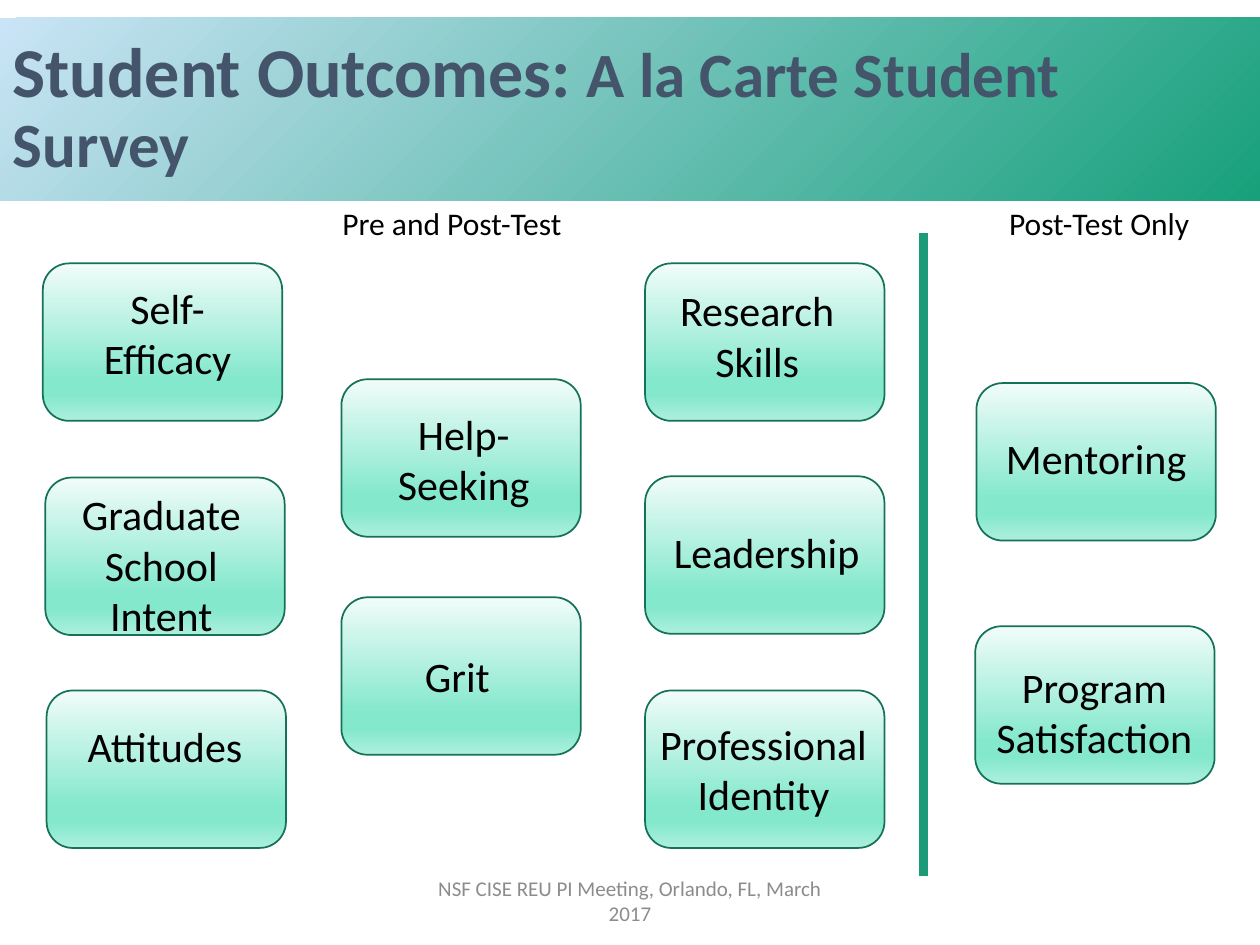
from dataclasses import dataclass

import pptx
import pptx.util
import pptx.dml.color
import pptx.enum.shapes
import pptx.enum.text
import pptx.oxml
import pptx.oxml.ns

RGBColor = pptx.dml.color.RGBColor
PP_ALIGN = pptx.enum.text.PP_ALIGN
MSO_ANCHOR = pptx.enum.text.MSO_ANCHOR

SLATE = RGBColor(0x44, 0x54, 0x6A)
BLACK = RGBColor(0, 0, 0)
GREY = RGBColor(0x8C, 0x8C, 0x8C)
GREEN = RGBColor(0x1D, 0x9A, 0x78)
DARK_GREEN = RGBColor(0x15, 0x72, 0x59)
SKY = RGBColor(0xCA, 0xE4, 0xF6)
EMERALD = RGBColor(0x17, 0xA0, 0x7B)
PALE_MINT = RGBColor(0xF1, 0xFC, 0xF9)
MINT = RGBColor(0x83, 0xE8, 0xCC)
LIGHT_MINT = RGBColor(0xAC, 0xEF, 0xDD)

BANNER_STOPS = [(0, SKY), (100, EMERALD)]
CARD_STOPS = [(0, PALE_MINT), (74, MINT), (83, MINT), (100, LIGHT_MINT)]

FONT = "Calibri"
CELL = pptx.util.Inches(0.1)  # the slide is a grid of 100 columns by 75 rows
COLUMNS, ROWS = 100, 75
CARD_W, CARD_H = 19, 12.5


@dataclass
class Area:
    """A rectangle in grid columns and rows."""
    col: float
    row: float
    cols: float
    rows: float

    def emu(self) -> list[int]:
        return [round(v * CELL) for v in (self.col, self.row, self.cols, self.rows)]


@dataclass
class Card:
    """A rounded box; its label is shifted from the box's top left corner."""
    text: str
    col: float
    row: float
    label_dx: float
    label_dy: float
    label_cols: float = 16.2
    lines: int = 2


CARDS = [
    Card("Self-Efficacy", 3.4, 20.9, 1.8, 1),
    Card("Graduate School Intent", 3.6, 37.9, 1.1, 0.4, lines=3),
    Card("Attitudes", 3.7, 54.8, 1.3, 1.9, lines=1),
    Card("Help-Seeking", 27.1, 30.1, 1.6, 1.8),
    Card("Grit", 27.1, 47.4, 1.1, 3.7, lines=1),
    Card("Research Skills", 51.2, 20.9, 0.8, 1.2),
    Card("Leadership", 51.2, 37.8, 1.1, 3.5, 17.1, lines=1),
    Card("Professional Identity", 51.2, 54.8, -0.1, 1.7, 19),
    Card("Mentoring", 77.5, 30.4, 0.6, 3.4, 17.8, lines=1),
    Card("Program Satisfaction", 77.4, 49.7, 0, 2.3, 18.9),
]


def fill_gradient(shape, stops: list[tuple[int, RGBColor]], clockwise: float) -> None:
    shape.fill.gradient()
    shape.fill.gradient_angle = 360 - clockwise
    gs_list = shape.element.spPr.find(".//" + pptx.oxml.ns.qn("a:gsLst"))
    for gs in list(gs_list):
        gs_list.remove(gs)
    for percent, color in stops:
        gs_list.append(pptx.oxml.parse_xml(
            f'<a:gs {pptx.oxml.ns.nsdecls("a")} pos="{percent * 1000}">'
            f'<a:srgbClr val="{color}"/></a:gs>'))


def format_run(r, size: float, color: RGBColor, bold: bool = False) -> None:
    r.font.name = FONT
    r.font.size = pptx.util.Pt(size)
    r.font.bold = bold
    r.font.color.rgb = color


def add_text(s, text: str, area: Area, size: float, color: RGBColor = BLACK,
             align=PP_ALIGN.CENTER, anchor=MSO_ANCHOR.TOP) -> None:
    tf = s.shapes.add_textbox(*area.emu()).text_frame
    tf.word_wrap = True
    tf.vertical_anchor = anchor
    tf.text = text
    p = tf.paragraphs[0]
    p.alignment = align
    format_run(p.runs[0], size, color)


def add_title(s) -> None:
    title = s.shapes.title
    title.left, title.top, title.width, title.height = Area(0, 1.4, COLUMNS, 14.5).emu()
    fill_gradient(title, BANNER_STOPS, 45)
    tf = title.text_frame
    tf.auto_size = pptx.enum.text.MSO_AUTO_SIZE.NONE
    tf.vertical_anchor = MSO_ANCHOR.MIDDLE
    p = tf.paragraphs[0]
    p.alignment = PP_ALIGN.LEFT
    p.line_spacing = 0.9
    for text, size in [("Student Outcomes: ", 40), ("A la Carte Student Survey", 36)]:
        r = p.add_run()
        r.text = text
        format_run(r, size, SLATE, bold=True)


def add_card(s, card: Card) -> None:
    box = s.shapes.add_shape(pptx.enum.shapes.MSO_SHAPE.ROUNDED_RECTANGLE,
                             *Area(card.col, card.row, CARD_W, CARD_H).emu())
    box.shadow.inherit = False
    fill_gradient(box, CARD_STOPS, 90)
    box.line.color.rgb = DARK_GREEN
    box.line.width = pptx.util.Pt(1)
    label = Area(card.col + card.label_dx, card.row + card.label_dy,
                 card.label_cols, 1 + 4 * card.lines)
    add_text(s, card.text, label, 24)


def add_divider(s, col: float, top: float, bottom: float) -> None:
    x, y1, y2 = (round(v * CELL) for v in (col, top, bottom))
    line = s.shapes.add_connector(pptx.enum.shapes.MSO_CONNECTOR.STRAIGHT, x, y1, x, y2)
    line.line.color.rgb = GREEN
    line.line.width = pptx.util.Pt(5)
    line.element.spPr.append(
        pptx.oxml.parse_xml(f'<a:effectLst {pptx.oxml.ns.nsdecls("a")}/>'))


def main() -> None:
    prs = pptx.Presentation()
    prs.slide_width, prs.slide_height = COLUMNS * CELL, ROWS * CELL
    s = prs.slides.add_slide(prs.slide_layouts.get_by_name("Title Only"))
    add_title(s)
    add_text(s, "NSF CISE REU PI Meeting, Orlando, FL, March 2017",
             Area(33.1, 69.5, 33.8, 4), 12, GREY, anchor=MSO_ANCHOR.MIDDLE)
    for card in CARDS:
        add_card(s, card)
    add_divider(s, 73.3, 18.5, 69.5)
    add_text(s, "Pre and Post-Test ", Area(23.9, 15.7, 24.5, 4), 18)
    add_text(s, "Post-Test Only", Area(79.1, 15.7, 17.2, 4), 18, align=PP_ALIGN.LEFT)
    prs.save("out.pptx")


if __name__ == "__main__":
    main()
